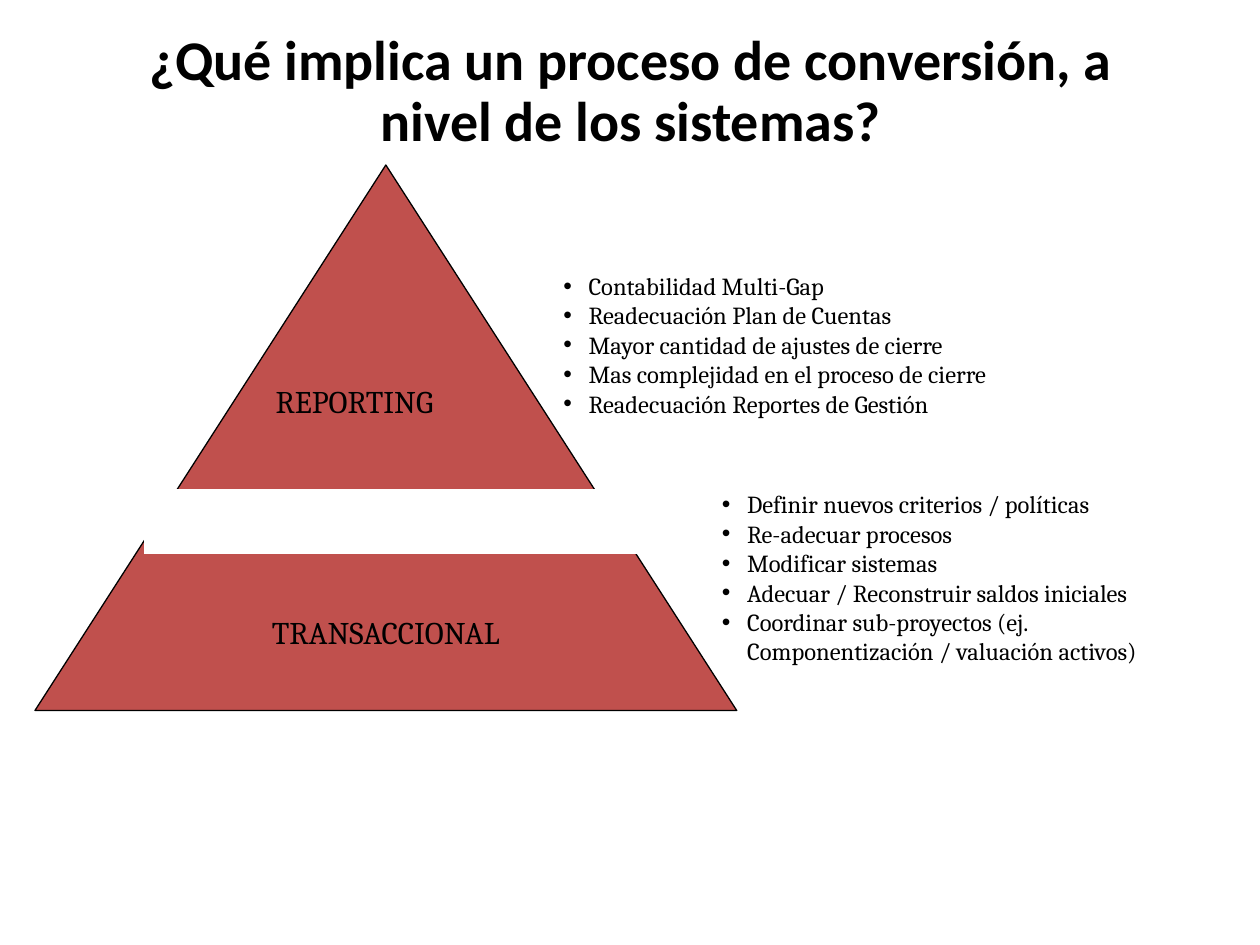
import pptx
import pptx.util
import pptx.dml.color
import pptx.enum.shapes
import pptx.enum.text
import pptx.oxml.ns
from lxml import etree

Pt = pptx.util.Pt
RGBColor = pptx.dml.color.RGBColor
MSO_SHAPE = pptx.enum.shapes.MSO_SHAPE
MSO_ANCHOR = pptx.enum.text.MSO_ANCHOR
MSO_AUTO_SIZE = pptx.enum.text.MSO_AUTO_SIZE
PP_ALIGN = pptx.enum.text.PP_ALIGN

BLACK = RGBColor(0x00, 0x00, 0x00)
WHITE = RGBColor(0xFF, 0xFF, 0xFF)
RED = RGBColor(0xC0, 0x50, 0x4D)

REPORTING_TASKS = [
    "Contabilidad Multi-Gap",
    "Readecuación Plan de Cuentas",
    "Mayor cantidad de ajustes de cierre",
    "Mas complejidad en el proceso de cierre",
    "Readecuación Reportes de Gestión",
]
TRANSACTION_TASKS = [
    "Definir nuevos criterios / políticas",
    "Re-adecuar procesos",
    "Modificar sistemas",
    "Adecuar / Reconstruir saldos iniciales",
    "Coordinar sub-proyectos (ej. Componentización / valuación activos)",
]


def place(shape, box):
    shape.left, shape.top, shape.width, shape.height = (Pt(length) for length in box)


def set_font(paragraph, name, size, bold=False):
    font = paragraph.font
    font.name, font.size, font.bold = name, Pt(size), bold
    font.color.rgb = BLACK


def set_frame(text_frame, anchor, wrap, side=1.5, bottom=3.6):
    text_frame.auto_size = MSO_AUTO_SIZE.NONE
    text_frame.vertical_anchor = anchor
    text_frame.word_wrap = wrap
    text_frame.margin_left = text_frame.margin_right = Pt(side)
    text_frame.margin_top, text_frame.margin_bottom = Pt(3.6), Pt(bottom)


def add_bullet(paragraph):
    properties = paragraph._p.get_or_add_pPr()
    properties.set("marL", str(Pt(14.4)))
    properties.set("indent", str(-Pt(14.4)))
    bullet = etree.SubElement(properties, pptx.oxml.ns.qn("a:buChar"))
    bullet.set("char", "•")


def fill_title(title, box):
    place(title, box)
    set_frame(title.text_frame, MSO_ANCHOR.TOP, True, side=7.2)
    title.text_frame.text = "¿Qué implica un proceso de conversión, a nivel de los sistemas?"
    paragraph = title.text_frame.paragraphs[0]
    paragraph.alignment = PP_ALIGN.CENTER
    paragraph.line_spacing = 0.9
    set_font(paragraph, "Calibri", 32, bold=True)


def fill_list(body, box, items, wrap):
    place(body, box)
    text_frame = body.text_frame
    set_frame(text_frame, MSO_ANCHOR.TOP, wrap)
    text_frame.text = "\n".join(items)
    for paragraph in text_frame.paragraphs:
        paragraph.space_before = Pt(0)
        add_bullet(paragraph)
        set_font(paragraph, "Cambria", 14)


def add_pyramid(slide, box):
    left, top, width, height = box

    # Whole pyramid, labelled in its lower layer
    pyramid = slide.shapes.add_shape(
        MSO_SHAPE.ISOSCELES_TRIANGLE, *(Pt(length) for length in box))
    pyramid.shadow.inherit = False
    pyramid.fill.solid()
    pyramid.fill.fore_color.rgb = RED
    pyramid.line.color.rgb = BLACK
    pyramid.line.width = Pt(0.75)
    set_frame(pyramid.text_frame, MSO_ANCHOR.BOTTOM, False, bottom=34)
    pyramid.text_frame.text = "TRANSACCIONAL"
    paragraph = pyramid.text_frame.paragraphs[0]
    paragraph.alignment = PP_ALIGN.CENTER
    set_font(paragraph, "Cambria", 18)

    # White band that separates the two layers
    band = slide.shapes.add_shape(
        MSO_SHAPE.FLOWCHART_PROCESS,
        Pt(left + 62), Pt(top + 185), Pt(306), Pt(37))
    band.shadow.inherit = False
    band.fill.solid()
    band.fill.fore_color.rgb = WHITE
    band.line.fill.background()

    # Label of the upper layer
    label = slide.shapes.add_textbox(
        Pt(left + 136), Pt(top + 120.3), Pt(110), Pt(29))
    set_frame(label.text_frame, MSO_ANCHOR.TOP, False)
    label.text_frame.text = "REPORTING"
    set_font(label.text_frame.paragraphs[0], "Cambria", 18)


def main():
    presentation = pptx.Presentation()
    presentation.slide_width, presentation.slide_height = Pt(720), Pt(540)
    slide = presentation.slides.add_slide(presentation.slide_layouts[3])
    title, reporting, transactions = slide.placeholders

    fill_title(title, (42.5, 15, 636, 84))
    add_pyramid(slide, (20, 94.3, 401, 311.7))
    fill_list(reporting, (320.4, 151.2, 266, 92), REPORTING_TASKS, wrap=False)
    fill_list(transactions, (411, 276, 284.5, 126), TRANSACTION_TASKS, wrap=True)

    presentation.save("out.pptx")


if __name__ == "__main__":
    main()
